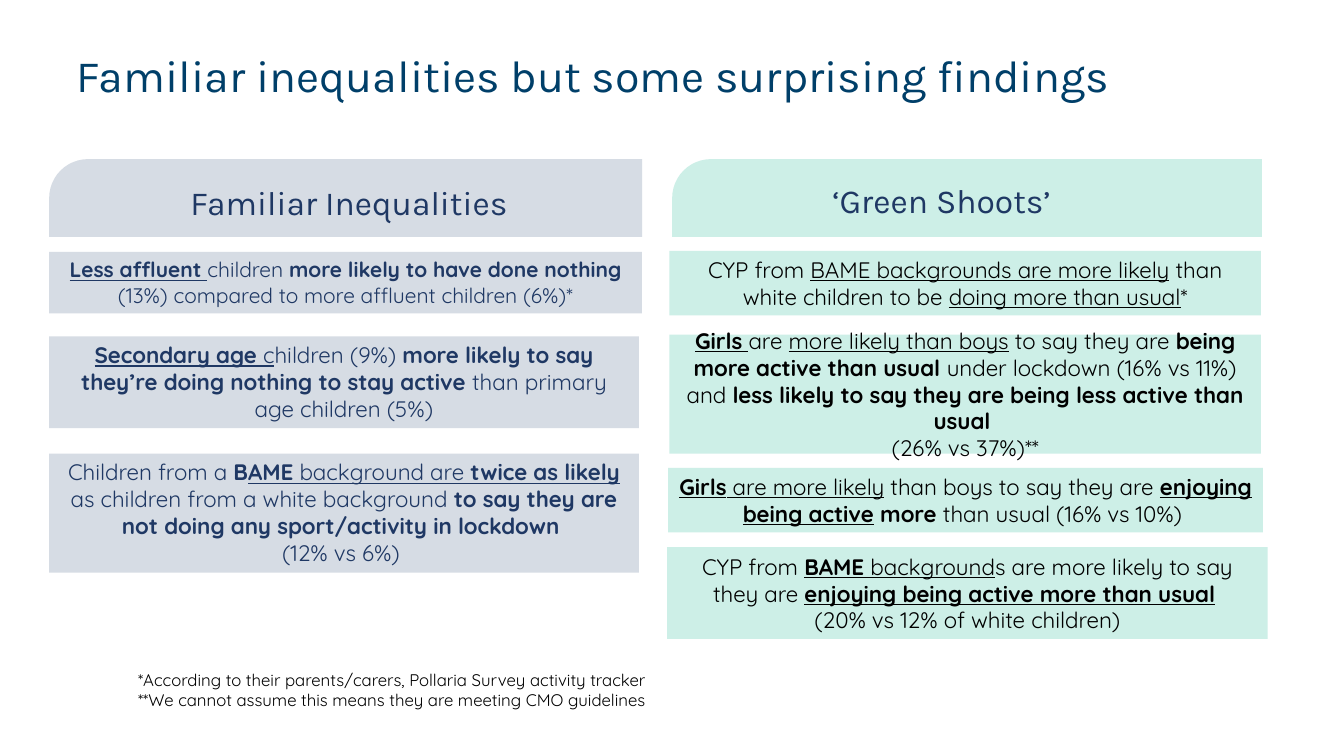
import pptx
import pptx.dml.color
import pptx.enum.shapes
import pptx.enum.text
import pptx.util
from lxml import etree
from pptx.util import Cm

COLOURS = {"title": "003F69", "navy": "1F3864", "black": "000000",
           "grey": "D6DCE4", "mint": "CDEFE7"}
SHAPES = pptx.enum.shapes.MSO_SHAPE
ALIGN = pptx.enum.text.PP_ALIGN
ANCHOR = pptx.enum.text.MSO_ANCHOR

INEQUALITIES = [
    ((1.24, 6.35, 14.94, 1.55), 15, [
        ("Less affluent ", "bu"), ("children ", ""),
        ("more likely to have done nothing ", "b"),
        ("(13%) compared to more affluent children (6%)*", "")]),
    ((1.24, 8.48, 14.86, 2.31), 16, [
        ("Secondary age ", "bu"), ("c", "u"), ("hildren (9%) ", ""),
        ("more likely to say they’re doing nothing to stay active ", "b"),
        ("than primary age children (5%)", "")]),
    ((1.24, 11.43, 14.86, 3), 16, [
        ("Children from a ", ""), ("B", "b"), ("AME", "bu"),
        (" background are ", "u"), ("twice as likely", "bu"),
        (" as children from a white background ", ""),
        ("to say they are not doing any sport/activity in lockdown ", "b"),
        ("\n", ""), ("(12% vs 6%) ", "")]),
]
GREEN_SHOOTS = [
    ((16.87, 6.32, 14.91, 1.63), 16, [
        ("CYP from ", ""), ("BAME backgrounds are more likely", "u"),
        (" than white children to be ", ""),
        ("doing more than usual", "u"), ("*", "")]),
    ((16.87, 8.43, 14.91, 3), 16, [
        ("Girls", "bu"), (" ", "u"), ("are ", ""),
        ("more likely than boys", "u"), (" to say they are ", ""),
        ("being more active than usual ", "b"),
        ("under lockdown (16% vs 11%) and ", ""),
        ("less likely to say they are being less active than usual ", "b"),
        ("\n", ""), ("(26% vs 37%)**", "")]),
    ((16.84, 11.79, 14.99, 1.63), 16, [
        ("Girls", "bu"), (" are more likely", "u"),
        (" than boys to say they are ", ""),
        ("enjoying being active", "bu"), (" more ", "b"),
        ("than usual (16% vs 10%)\u00a0", "")]),
    ((16.81, 13.79, 15.14, 2.31), 16, [
        ("CYP from ", ""), ("BAME", "bu"), (" background", "u"),
        ("s are more likely to say they are ", ""),
        ("enjoying being active more than usual", "bu"), (" ", "b"),
        ("\n", ""), ("(20% vs 12% of white children)", "")]),
]


def rgb(name):
    return pptx.dml.color.RGBColor.from_string(COLOURS[name])


def set_font(paragraph, name, size, colour):
    paragraph.font.name = name
    paragraph.font.size = pptx.util.Pt(size)
    paragraph.font.color.rgb = rgb(colour)


def add_block(slide, kind, box, fill):
    shape = slide.shapes.add_shape(kind, *map(Cm, box))
    shape.shadow.inherit = False
    shape.fill.solid()
    shape.fill.fore_color.rgb = rgb(fill)
    shape.line.fill.background()
    return shape


def add_finding(slide, box, size, runs, fill, colour, anchor):
    frame = add_block(slide, SHAPES.RECTANGLE, box, fill).text_frame
    frame.word_wrap = True
    frame.vertical_anchor = anchor
    paragraph = frame.paragraphs[0]
    paragraph.alignment = ALIGN.CENTER
    set_font(paragraph, "Quicksand", size, colour)
    for text, style in runs:
        if text == "\n":
            paragraph.add_line_break()
            continue
        run = paragraph.add_run()
        run.text = text
        run.font.color.rgb = rgb(colour)
        if "b" in style:
            run.font.bold = True
        if "u" in style:
            run.font.underline = True


def add_text(slide, box, lines, font, size, colour):
    frame = slide.shapes.add_textbox(*map(Cm, box)).text_frame
    frame.word_wrap = True
    for index, line in enumerate(lines):
        paragraph = frame.add_paragraph() if index else frame.paragraphs[0]
        paragraph.text = line
        set_font(paragraph, font, size, colour)
    return frame


def add_title(slide, text):
    frame = add_text(slide, (1.93, 1.35, 27.41, 1.57), [text], "Karla", 32, "title")
    frame.word_wrap = False
    frame.margin_left = frame.margin_right = 0
    frame.margin_top = frame.margin_bottom = 0
    frame.paragraphs[0].line_spacing = 0.9


def add_header(slide, box, label_box, label, fill):
    shape = add_block(slide, SHAPES.SNIP_ROUND_RECTANGLE, box, fill)
    shape.adjustments[0] = 0.5
    shape.adjustments[1] = 0
    add_text(slide, label_box, [label], "Karla", 24, "navy")


def main():
    """Build the slide comparing familiar inequalities with green shoots."""
    presentation = pptx.Presentation()
    presentation.slide_width = Cm(33.87)
    presentation.slide_height = Cm(19.05)
    slide = presentation.slides.add_slide(presentation.slide_layouts[6])

    add_title(slide, "Familiar inequalities but some surprising findings")
    add_header(slide, (1.24, 4.01, 14.94, 1.96), (4.55, 4.45, 11.05, 1.27),
               "Familiar Inequalities", "grey")
    add_header(slide, (16.94, 4.01, 14.86, 1.96), (20.73, 4.42, 7.49, 1.27),
               "‘Green Shoots’", "mint")
    for finding in INEQUALITIES:
        add_finding(slide, *finding, "grey", "navy", ANCHOR.TOP)
    for finding in GREEN_SHOOTS:
        add_finding(slide, *finding, "mint", "black", ANCHOR.MIDDLE)
    add_text(slide, (3.23, 16.74, 13.72, 1.27), [
        "*According to their parents/carers, Pollaria Survey activity tracker",
        "**We cannot assume this means they are meeting CMO guidelines",
    ], "Quicksand", 12, "black")

    presentation.save("out.pptx")


if __name__ == "__main__":
    main()
